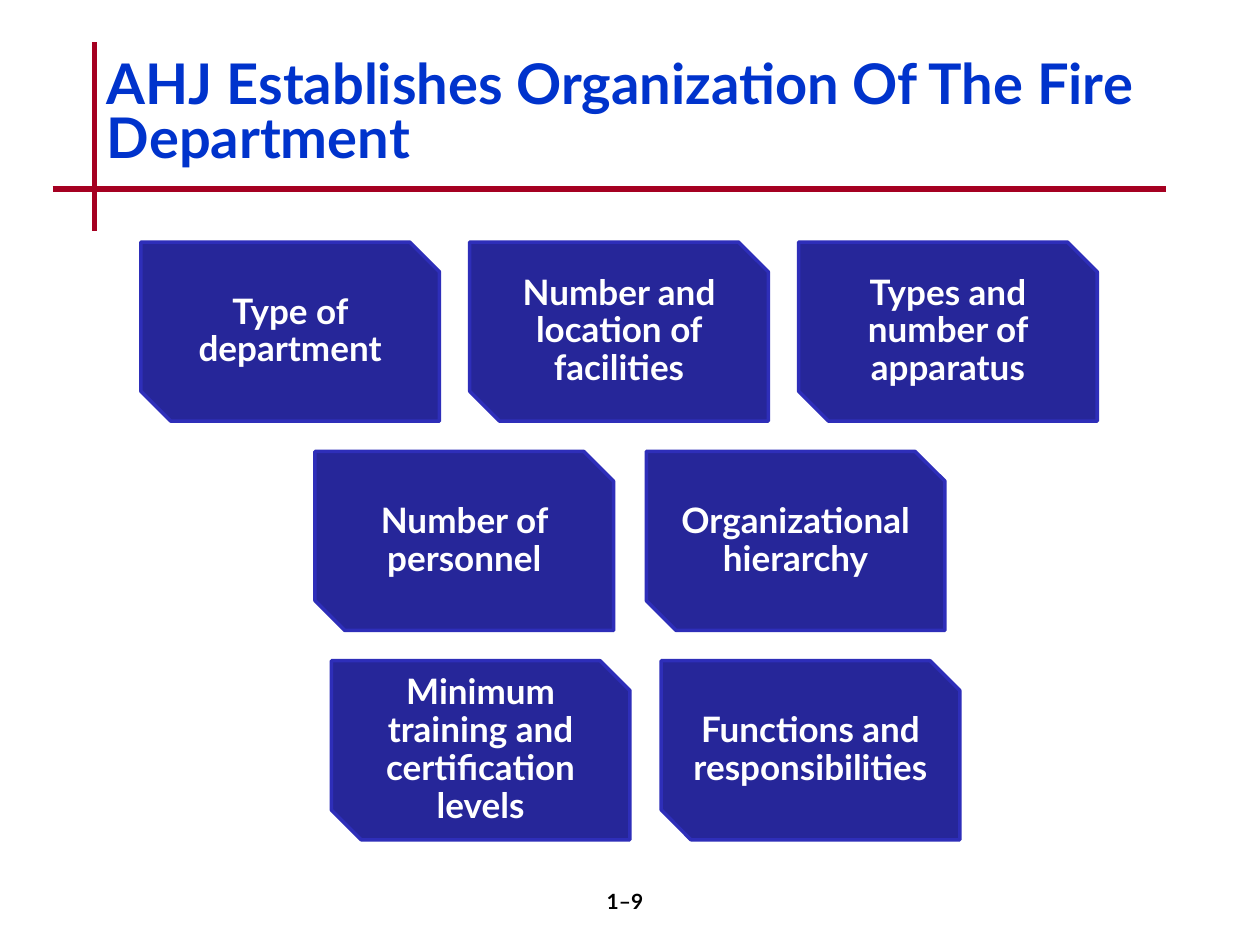
from pptx import Presentation
from pptx.dml.color import RGBColor
from pptx.enum.shapes import MSO_CONNECTOR, MSO_SHAPE
from pptx.enum.text import MSO_ANCHOR, MSO_AUTO_SIZE, PP_ALIGN
from pptx.oxml.ns import qn
from pptx.util import Cm, Pt
from lxml.etree import SubElement


def color(code):
    return RGBColor.from_string(code)


def write(shape, text, size=20, ink="FFFFFF", align=PP_ALIGN.CENTER,
          anchor=MSO_ANCHOR.MIDDLE, space=0.9, pad=None):
    frame = shape.text_frame
    frame.word_wrap = True
    frame.auto_size = MSO_AUTO_SIZE.NONE
    frame.vertical_anchor = anchor
    if pad is not None:
        frame.margin_left = frame.margin_right = pad
        frame.margin_top = frame.margin_bottom = pad
    para = frame.paragraphs[0]
    para.alignment = align
    para.line_spacing = space
    para.space_before = Pt(0)
    run = para.add_run()
    run.text = text
    run.font.name = "Lato"
    run.font.size = Pt(size)
    run.font.bold = True
    run.font.color.rgb = color(ink)


deck = Presentation()
deck.slide_width, deck.slide_height = Cm(25.4), Cm(19.05)
slide = deck.slides.add_slide(deck.slide_layouts[5])
shapes = slide.shapes

# Crossed rules beside the title
for x1, y1, x2, y2 in [(1.9, 0.85, 1.9, 4.66), (1.06, 3.81, 23.5, 3.81)]:
    rule = shapes.add_connector(MSO_CONNECTOR.STRAIGHT, Cm(x1), Cm(y1), Cm(x2), Cm(y2))
    rule.line.color.rgb = color("A50021")
    rule.line.width = Pt(3)
    SubElement(rule._element.spPr, qn("a:effectLst"))

# Title
title = shapes.title
title.left, title.top, title.width, title.height = Cm(1.9), Cm(0.85), Cm(22.01), Cm(2.96)
write(title, "AHJ Establishes Organization Of The Fire Department",
      size=32, ink="0033CC", align=PP_ALIGN.LEFT, space=0.8)

# Rows of cards: left edge, step, labels
rows = [
    (2.84, 6.63, ["Type of department", "Number and location of facilities",
                  "Types and number of apparatus"]),
    (6.35, 6.68, ["Number of personnel", "Organizational hierarchy"]),
    (6.68, 6.65, ["Minimum training and certification levels",
                  "Functions and responsibilities"]),
]
for row, (left, step, labels) in enumerate(rows):
    for col, label in enumerate(labels):
        card = shapes.add_shape(MSO_SHAPE.SNIP_2_DIAG_RECTANGLE, Cm(left + col * step),
                                Cm(4.88 + row * 4.22), Cm(6.02), Cm(3.61))
        card.shadow.inherit = False
        card.fill.solid()
        card.fill.fore_color.rgb = color("262699")
        card.line.color.rgb = color("2E2EB9")
        card.line.width = Pt(2)
        write(card, label, pad=Cm(0.2))

# Page number
page = shapes.add_textbox(Cm(9.96), Cm(17.78), Cm(5.28), Cm(1.27))
write(page, "1–9", size=12, ink="000000", anchor=MSO_ANCHOR.TOP, space=1.0)

deck.save("out.pptx")
